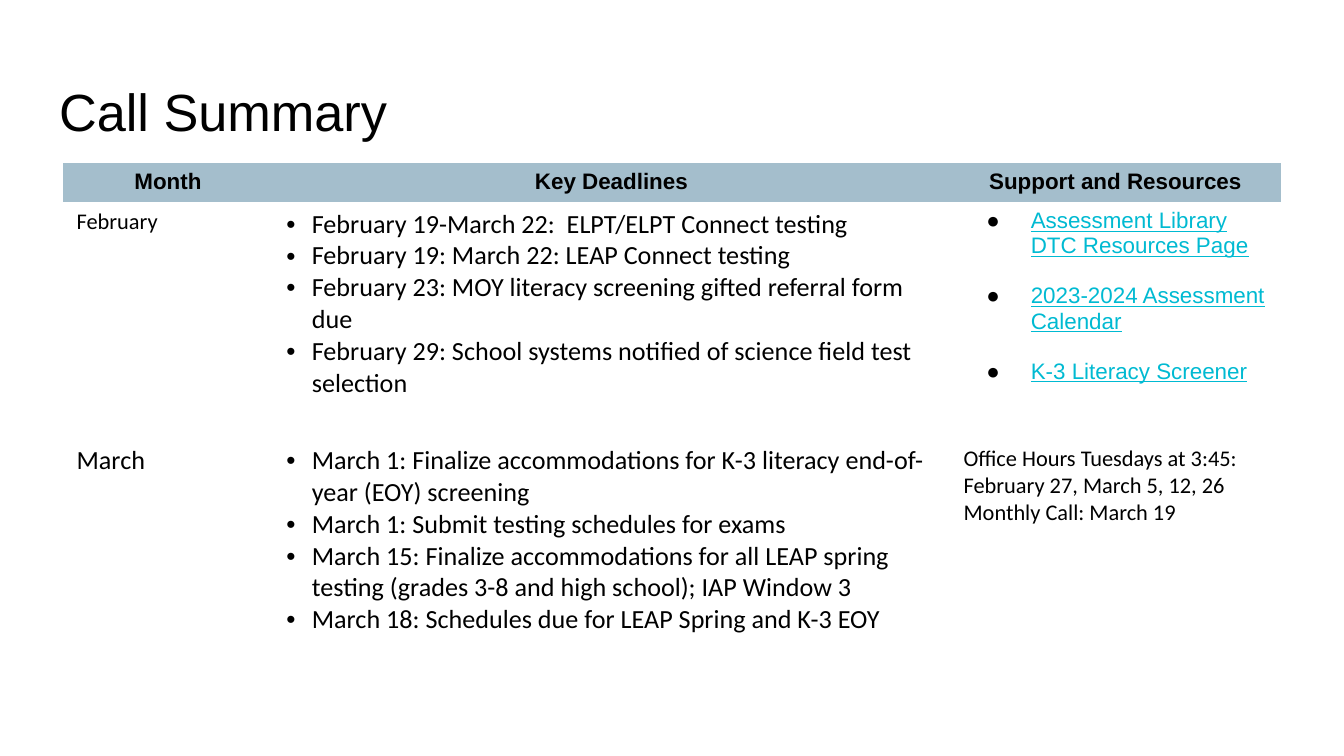
from lxml.etree import SubElement
from pptx import Presentation
from pptx.dml.color import RGBColor
from pptx.enum.text import MSO_ANCHOR, MSO_AUTO_SIZE, PP_ALIGN
from pptx.oxml.ns import qn
from pptx.util import Inches, Pt

BLACK = RGBColor(0x00, 0x00, 0x00)
HEADER_BLUE = RGBColor(0xA4, 0xBE, 0xCC)
LINK_TEAL = RGBColor(0x00, 0xBA, 0xD2)
PLAIN_TABLE_STYLE = "{2D5ABB26-0587-4C30-8999-92F81FD0307C}"

HEADINGS = ["Month", "Key Deadlines", "Support and Resources"]
COLUMN_WIDTHS = [1.56, 5.04, 2.46]
ROW_HEIGHTS = [0.29, 1.76, 1.48]
FEBRUARY_DEADLINES = [
    "February 19-March 22:  ELPT/ELPT Connect testing",
    "February 19: March 22: LEAP Connect testing",
    "February 23: MOY literacy screening gifted referral form due",
    "February 29: School systems notified of science field test selection",
]
MARCH_DEADLINES = [
    "March 1: Finalize accommodations for K-3 literacy end-of-year (EOY) screening",
    "March 1: Submit testing schedules for exams",
    "March 15: Finalize accommodations for all LEAP spring testing (grades 3-8 and high school); IAP Window 3",
    "March 18: Schedules due for LEAP Spring and K-3 EOY",
]
RESOURCES = [
    "Assessment Library DTC Resources Page",
    "2023-2024 Assessment Calendar",
    "K-3 Literacy Screener",
]
MEETINGS = [
    "Office Hours Tuesdays at 3:45: February 27, March 5, 12, 26",
    "Monthly Call: March 19",
]


def style_font(font, size, name="Calibri", color=BLACK, bold=False, underline=False):
    font.size = Pt(size)
    font.name = name
    font.color.rgb = color
    font.bold = bold
    font.underline = underline


def add_bullet(para, character, indent, hanging):
    properties = para._p.get_or_add_pPr()
    properties.set("marL", str(Inches(indent)))
    properties.set("indent", str(-Inches(hanging)))
    color = SubElement(properties, qn("a:buClr"))
    SubElement(color, qn("a:srgbClr"), val=str(BLACK))
    SubElement(properties, qn("a:buFont"), typeface="Arial")
    SubElement(properties, qn("a:buChar"), char=character)


def fill_cell(cell, lines, size, **style):
    cell.fill.background()
    cell.text_frame.text = "\n".join(lines)
    for para in cell.text_frame.paragraphs:
        for span in para.runs:
            style_font(span.font, size, **style)


def fill_header(cell, text):
    fill_cell(cell, [text], 12, name="Arial", bold=True)
    cell.fill.solid()
    cell.fill.fore_color.rgb = HEADER_BLUE
    cell.text_frame.paragraphs[0].alignment = PP_ALIGN.CENTER


def fill_deadlines(cell, deadlines):
    fill_cell(cell, deadlines, 14)
    for para in cell.text_frame.paragraphs:
        add_bullet(para, "•", 0.19, 0.19)


def fill_resources(cell, resources):
    fill_cell(cell, resources, 12, name="Arial", color=LINK_TEAL, underline=True)
    paragraphs = cell.text_frame.paragraphs
    for para in paragraphs:
        add_bullet(para, "●", 0.5, 0.33)
    for para in paragraphs[:-1]:
        para.space_after = Pt(13.5)


def set_title(page, text):
    title = page.shapes.title
    title.left, title.top = Inches(0.34), Inches(0.49)
    title.width, title.height = Inches(9.32), Inches(0.63)
    frame = title.text_frame
    frame.text = text
    frame.auto_size = MSO_AUTO_SIZE.NONE
    frame.vertical_anchor = MSO_ANCHOR.TOP
    frame.margin_left = frame.margin_right = Inches(0.1)
    frame.margin_top = frame.margin_bottom = Inches(0.1)
    para = frame.paragraphs[0]
    para.alignment = PP_ALIGN.LEFT
    style_font(para.runs[0].font, 28, name="Arial")


def add_schedule_table(page):
    frame = page.shapes.add_table(
        len(ROW_HEIGHTS), len(COLUMN_WIDTHS), Inches(0.47), Inches(1.21),
        Inches(sum(COLUMN_WIDTHS)), Inches(sum(ROW_HEIGHTS)))
    table = frame.table
    table.horz_banding = False
    table._tbl.tblPr.find(qn("a:tableStyleId")).text = PLAIN_TABLE_STYLE
    for column, width in zip(table.columns, COLUMN_WIDTHS):
        column.width = Inches(width)
    for row, height in zip(table.rows, ROW_HEIGHTS):
        row.height = Inches(height)
    return table


def main():
    deck = Presentation()
    deck.slide_width = Inches(10)
    deck.slide_height = deck.slide_width * 9 // 16
    page = deck.slides.add_slide(deck.slide_layouts[5])
    set_title(page, "Call Summary")
    table = add_schedule_table(page)
    for index, heading in enumerate(HEADINGS):
        fill_header(table.cell(0, index), heading)
    fill_cell(table.cell(1, 0), ["February"], 12)
    fill_deadlines(table.cell(1, 1), FEBRUARY_DEADLINES)
    fill_resources(table.cell(1, 2), RESOURCES)
    fill_cell(table.cell(2, 0), ["March"], 14)
    fill_deadlines(table.cell(2, 1), MARCH_DEADLINES)
    fill_cell(table.cell(2, 2), MEETINGS, 12)
    deck.save("out.pptx")


if __name__ == "__main__":
    main()
